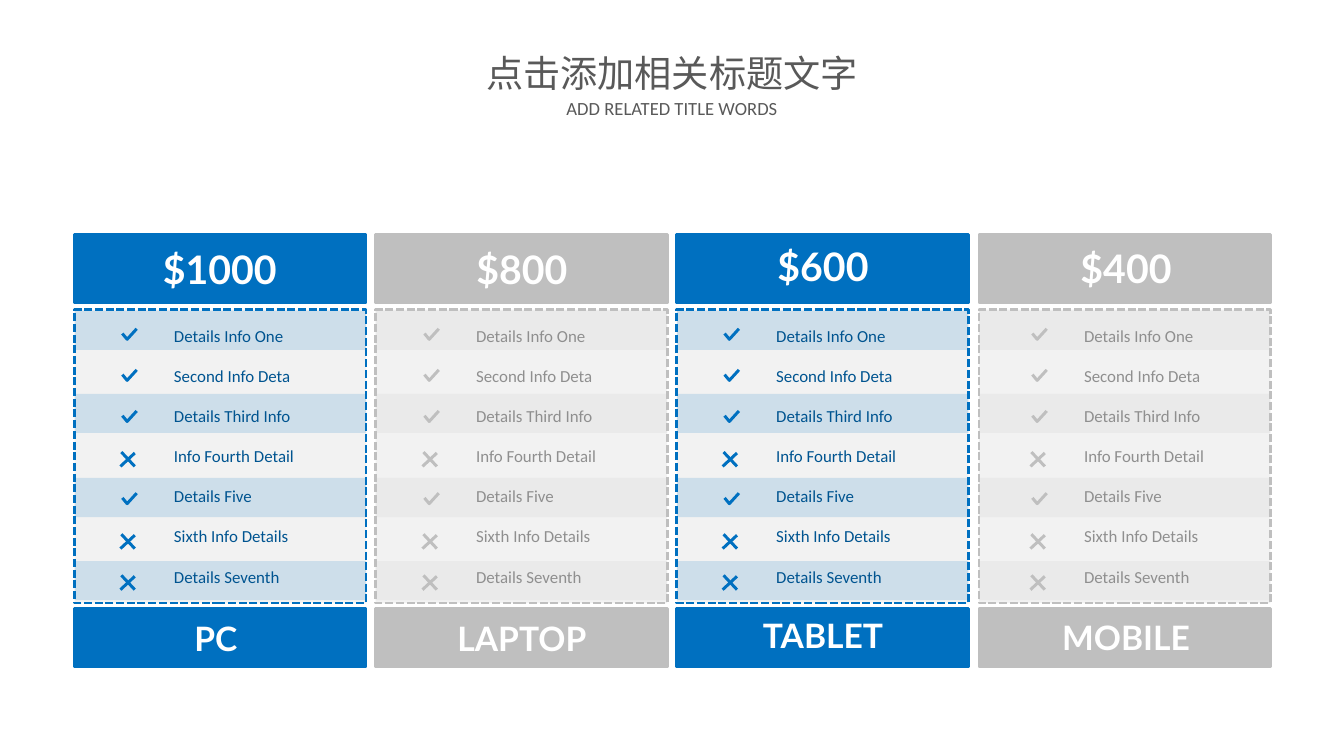
"""Build a pricing slide that compares four device plans."""
from lxml.etree import SubElement
from pptx import Presentation
from pptx.dml.color import RGBColor
from pptx.enum.dml import MSO_LINE
from pptx.enum.shapes import MSO_CONNECTOR, MSO_SHAPE
from pptx.enum.text import MSO_ANCHOR, MSO_AUTO_SIZE, PP_ALIGN
from pptx.oxml.ns import qn
from pptx.util import Pt

PX = 9144
COLORS = {
    "blue": "0070C0", "navy": "005490", "silver": "BFBFBF", "gray": "8F8F8F",
    "panel": "F2F2F2", "white": "FFFFFF", "title": "595959",
}
DETAILS = [
    ("Details Info One", True), ("Second Info Deta", True),
    ("Details Third Info", True), ("Info Fourth Detail", False),
    ("Details Five", True), ("Sixth Info Details", False),
    ("Details Seventh", False),
]
PLANS = [
    {"price": "$1000", "device": "PC ", "accent": "blue", "ink": "navy",
     "text_left": 84, "price_top": 257, "mark_left": 128},
    {"price": "$800", "device": "LAPTOP", "accent": "silver", "ink": "gray",
     "text_left": 400, "price_top": 257, "mark_left": 444},
    {"price": "$600", "device": "TABLET", "accent": "blue", "ink": "navy",
     "text_left": 715, "price_top": 254, "mark_left": 758},
    {"price": "$400", "device": "MOBILE", "accent": "silver", "ink": "gray",
     "text_left": 1032, "price_top": 256, "mark_left": 1080},
]
COLUMN_LEFT, COLUMN_WIDTH = 78, 305
MARK_TOP, MARK_PITCH = 344, 43


def write_text(shape, lines, size, color, font="Calibri", bold=False, align=PP_ALIGN.CENTER,
               anchor=MSO_ANCHOR.TOP, wrap=True, spacing=1.0, gap=0, inset=(10, 5)):
    frame = shape.text_frame
    frame.word_wrap = wrap
    frame.auto_size = MSO_AUTO_SIZE.NONE
    frame.vertical_anchor = anchor
    frame.margin_left = frame.margin_right = inset[0] * PX
    frame.margin_top = frame.margin_bottom = inset[1] * PX
    for index, line in enumerate(lines):
        paragraph = frame.add_paragraph() if index else frame.paragraphs[0]
        paragraph.alignment = align
        paragraph.line_spacing = spacing
        paragraph.space_before = Pt(gap if index else 0)
        run = paragraph.add_run()
        run.text = line
        run.font.size = Pt(size)
        run.font.name = font
        run.font.bold = bold
        run.font.color.rgb = RGBColor.from_string(COLORS[color])


def add_block(shapes, box, fill, line=None, dash=None, alpha=None):
    block = shapes.add_shape(MSO_SHAPE.RECTANGLE, *[length * PX for length in box])
    block.shadow.inherit = False
    block.fill.solid()
    block.fill.fore_color.rgb = RGBColor.from_string(COLORS[fill])
    if alpha:
        color = block.element.spPr.find(".//" + qn("a:srgbClr"))
        SubElement(color, qn("a:alpha"), val=str(alpha * 1000))
    if line:
        block.line.color.rgb = RGBColor.from_string(COLORS[line])
        block.line.width = Pt(2)
        block.line.dash_style = dash
    else:
        block.line.fill.background()


presentation = Presentation()
presentation.slide_width = 1406 * PX
presentation.slide_height = 791 * PX
slide = presentation.slides.add_slide(presentation.slide_layouts[5])
shapes = slide.shapes

title = shapes.title
title.left, title.top, title.width, title.height = [length * PX for length in (496, 48, 414, 58)]
write_text(title, ["点击添加相关标题文字"], 28, "title", wrap=False, inset=(11, 5))
subtitle = shapes.add_textbox(579 * PX, 97 * PX, 248 * PX, 34 * PX)
write_text(subtitle, ["ADD RELATED TITLE WORDS"], 14, "title", wrap=False, inset=(11, 5))

for column, plan in enumerate(PLANS):
    accent = plan["accent"]
    left = COLUMN_LEFT + column * 946 // 3
    add_block(shapes, (left, 324, COLUMN_WIDTH, 307), "panel", accent, MSO_LINE.SQUARE_DOT)
    add_block(shapes, (left, 245, COLUMN_WIDTH, 72), accent, accent)
    add_block(shapes, (left, 637, COLUMN_WIDTH, 61), accent, accent)
    for stripe in range(4):
        add_block(shapes, (left, 325 + stripe * 175 // 2, COLUMN_WIDTH, 41), accent, alpha=15)

    captions = [(plan["price"], plan["price_top"], 55, 29.6),
                (plan["device"], plan["price_top"] + 389, 48, 25.3)]
    for text, top, height, size in captions:
        caption = shapes.add_textbox(plan["text_left"] * PX, top * PX, 292 * PX, height * PX)
        write_text(caption, [text], size, "white", font="Lato", bold=True, spacing=0.9)

    mark_left = plan["mark_left"]
    for row, (detail, included) in enumerate(DETAILS):
        top = MARK_TOP + row * MARK_PITCH
        if included:
            builder = shapes.build_freeform(mark_left, top + 5, scale=PX)
            builder.add_line_segments(
                [(mark_left + 5, top + 11), (mark_left + 15, top)], close=False)
            check = builder.convert_to_shape()
            check.fill.background()
            strokes = [check]
        else:
            strokes = [
                shapes.add_connector(
                    MSO_CONNECTOR.STRAIGHT, (mark_left + start) * PX, (top + start_y) * PX,
                    (mark_left + 13) * PX, (top + end_y) * PX)
                for start, start_y, end_y in [(-1, 0, 15), (-2, 15, 1)]
            ]
        for stroke in strokes:
            stroke.line.color.rgb = RGBColor.from_string(COLORS[accent])
            stroke.line.width = Pt(2.25)
            SubElement(stroke.element.spPr, qn("a:effectLst"))

    details = shapes.add_textbox((mark_left + 54) * PX, 338 * PX, 155 * PX, 278 * PX)
    write_text(details, [detail for detail, included in DETAILS], 12.7, plan["ink"],
               align=PP_ALIGN.LEFT, anchor=MSO_ANCHOR.MIDDLE, gap=15, inset=(0, 0))

presentation.save("out.pptx")
